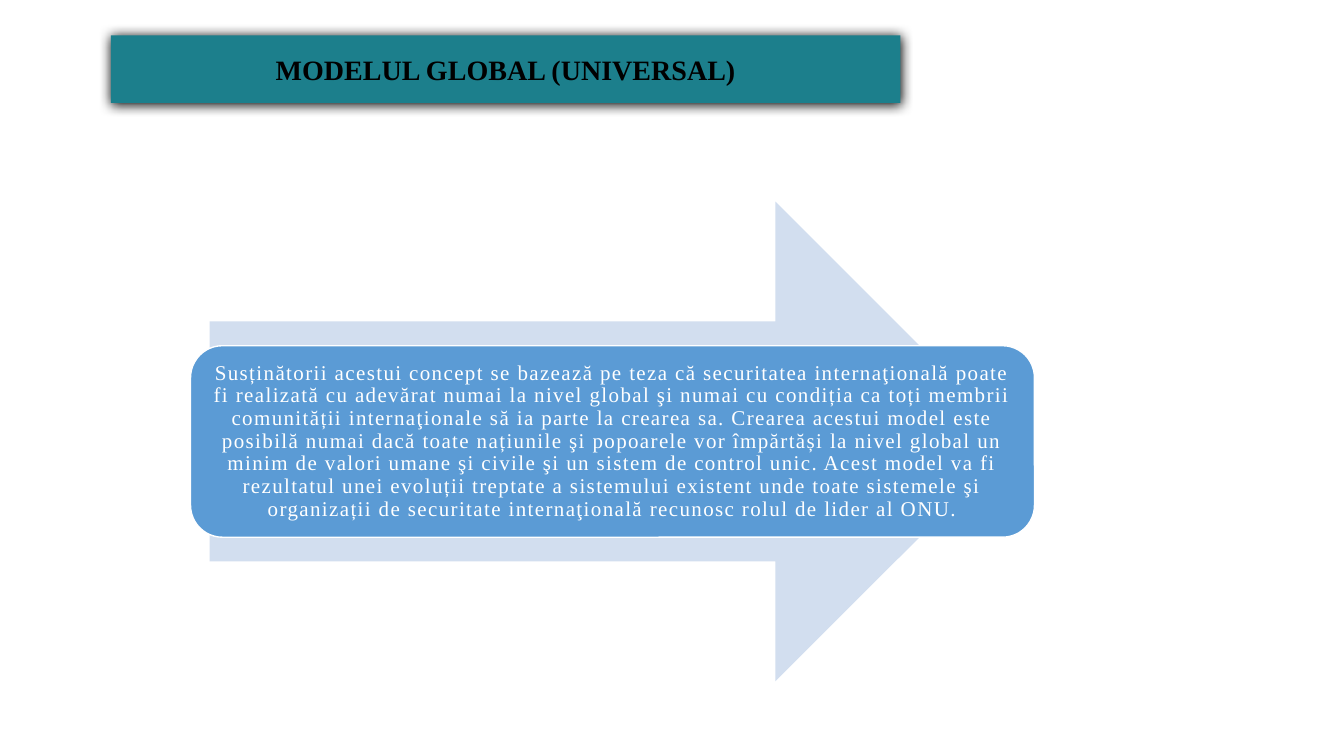
from lxml import etree
from pptx import Presentation
from pptx import util as u
from pptx.dml.color import RGBColor
from pptx.enum import shapes, text
from pptx.oxml import ns

TEAL = RGBColor(0x1C, 0x7F, 0x8C)
PALE_BLUE = RGBColor(0xD2, 0xDE, 0xEF)
BLUE = RGBColor(0x5B, 0x9B, 0xD5)
WHITE = RGBColor(0xFF, 0xFF, 0xFF)
BLACK = RGBColor(0x00, 0x00, 0x00)

HEADING = "MODELUL GLOBAL (UNIVERSAL)"
CONCEPT = (
    "Susținătorii acestui concept se bazează pe teza că securitatea internaţională poate "
    "fi realizată cu adevărat numai la nivel global şi numai cu condiția ca toți membrii "
    "comunității internaţionale să ia parte la crearea sa. Crearea acestui model este "
    "posibilă numai dacă toate națiunile şi popoarele vor împărtăși la nivel global un "
    "minim de valori umane şi civile şi un sistem de control unic. Acest model va fi "
    "rezultatul unei evoluții treptate a sistemului existent unde toate sistemele şi "
    "organizații de securitate internaţională recunosc rolul de lider al ONU."
)

TITLE_AREA = (1.1, 0.35, 7.83, 0.67)
ARROW_AREA = (2.08, 2, 7.99, 4.76)
CONCEPT_AREA = (1.89, 3.43, 8.37, 1.9)

TITLE_FONT = {"name": "Times New Roman", "size": u.Pt(20), "bold": True}
CONCEPT_FONT = {"name": "Times New Roman", "size": u.Pt(15), "bold": False}
TITLE_FRAME = {"word_wrap": True, "auto_size": text.MSO_AUTO_SIZE.NONE,
               "vertical_anchor": text.MSO_ANCHOR.MIDDLE}
CONCEPT_FRAME = TITLE_FRAME | {
    f"margin_{side}": u.Inches(0.06) for side in ("left", "top", "right", "bottom")}


def apply(target, values):
    for name, value in values.items():
        setattr(target, name, value)


def place(shape, area):
    apply(shape, dict(zip(("left", "top", "width", "height"), map(u.Inches, area))))


def paint(shape, fill, line=None):
    shape.fill.solid()
    shape.fill.fore_color.rgb = fill
    if line is None:
        shape.line.fill.background()
    else:
        shape.line.color.rgb = line
        shape.line.width = u.Pt(1)


def write(shape, words, frame_format, font_format, color):
    frame = shape.text_frame
    apply(frame, frame_format)
    para = frame.paragraphs[0]
    para.alignment = text.PP_ALIGN.CENTER
    span = para.add_run()
    span.text = words
    apply(span.font, font_format)
    span.font.color.rgb = color
    return para, span


def add_preset(page, kind, area, fill, line=None):
    shape = page.shapes.add_shape(kind, *map(u.Inches, area))
    shape.shadow.inherit = False
    paint(shape, fill, line)
    return shape


def cast_shadow(shape):
    effects = etree.SubElement(shape.element.spPr, ns.qn("a:effectLst"))
    shadow = etree.SubElement(effects, ns.qn("a:outerShdw"), blurRad=str(u.Pt(8.5)),
                              dist=str(u.Pt(1)), dir="5400000", rotWithShape="0")
    etree.SubElement(shadow, ns.qn("a:srgbClr"), val=str(BLACK))


def main():
    deck = Presentation()
    deck.slide_width, deck.slide_height = u.Inches(13.33), u.Inches(7.5)
    page = deck.slides.add_slide(deck.slide_layouts[5])

    title = page.shapes.title
    place(title, TITLE_AREA)
    paint(title, TEAL)
    cast_shadow(title)
    write(title, HEADING, TITLE_FRAME, TITLE_FONT, BLACK)

    add_preset(page, shapes.MSO_SHAPE.RIGHT_ARROW, ARROW_AREA, PALE_BLUE)
    box = add_preset(page, shapes.MSO_SHAPE.ROUNDED_RECTANGLE, CONCEPT_AREA, BLUE, WHITE)
    para, span = write(box, CONCEPT, CONCEPT_FRAME, CONCEPT_FONT, WHITE)
    para.line_spacing = 0.9
    span.font._element.set("spc", "100")

    deck.save("out.pptx")


if __name__ == "__main__":
    main()
